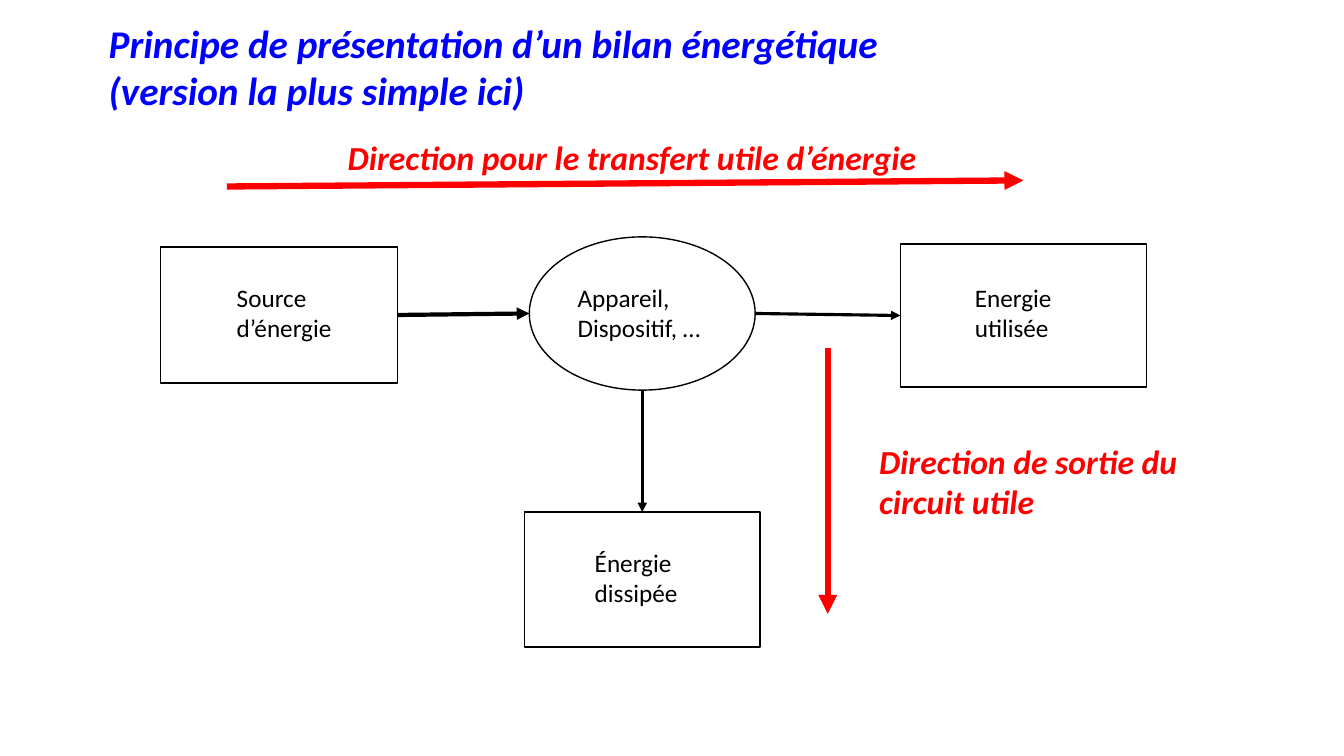
"""Build a slide showing the layout of a simple energy balance diagram."""
from pptx import Presentation
from pptx.dml.color import RGBColor
from pptx.enum import shapes, text
from pptx.oxml.ns import qn
from pptx.util import Inches, Pt
from lxml import etree

COLOURS = {"title": "0000FF", "ink": "000000", "direction": "FF0000"}

prs = Presentation()
prs.slide_width, prs.slide_height = Inches(13.33), Inches(7.5)
slide = prs.slides.add_slide(prs.slide_layouts[6])


def add_label(lines, box, size, colour, emphasis=False):
    label = slide.shapes.add_textbox(*map(Inches, box))
    frame = label.text_frame
    frame.word_wrap = True
    frame.auto_size = text.MSO_AUTO_SIZE.SHAPE_TO_FIT_TEXT
    frame.text = lines
    for paragraph in frame.paragraphs:
        font = paragraph.font
        font.name, font.size = "Calibri", Pt(size)
        font.bold = font.italic = emphasis
        font.color.rgb = RGBColor.from_string(COLOURS[colour])


def add_arrow(start, end, width, colour):
    arrow = slide.shapes.add_connector(
        shapes.MSO_CONNECTOR.STRAIGHT, *map(Inches, start + end))
    arrow.line.width = Pt(width)
    arrow.line.color.rgb = RGBColor.from_string(COLOURS[colour])
    etree.SubElement(arrow.line._get_or_add_ln(), qn("a:tailEnd"), type="triangle")
    etree.SubElement(arrow._element.spPr, qn("a:effectLst"))
    return arrow


stages = {}
for stage, outline, box in [
    ("source", shapes.MSO_SHAPE.RECTANGLE, (1.59, 2.45, 2.35, 1.35)),
    ("device", shapes.MSO_SHAPE.OVAL, (5.25, 2.35, 2.24, 1.52)),
    ("used", shapes.MSO_SHAPE.RECTANGLE, (8.93, 2.42, 2.44, 1.42)),
    ("lost", shapes.MSO_SHAPE.RECTANGLE, (5.2, 5.08, 2.34, 1.34)),
]:
    stages[stage] = slide.shapes.add_shape(outline, *map(Inches, box))
    stages[stage].shadow.inherit = False
    stages[stage].fill.background()
    stages[stage].line.width = Pt(1)
    stages[stage].line.color.rgb = RGBColor.from_string(COLOURS["ink"])

supply = add_arrow((3.94, 3.13), (5.25, 3.11), 3, "ink")
supply.begin_connect(stages["source"], 3)
useful_output = add_arrow((7.49, 3.11), (8.93, 3.11), 2.25, "ink")
useful_output.end_connect(stages["used"], 1)
loss = add_arrow((6.37, 3.87), (6.37, 5.08), 2.25, "ink")
loss.end_connect(stages["lost"], 0)

for lines, box in [
    ("Appareil,\nDispositif, …", (5.63, 2.75, 1.56, 0.71)),
    ("Source\nd’énergie", (2.25, 2.75, 1.5, 0.71)),
    ("Energie\nutilisée", (9.57, 2.75, 1.99, 0.71)),
    ("Énergie dissipée", (5.8, 5.38, 1.39, 0.71)),
]:
    add_label(lines, box, 18, "ink")

add_label("Principe de présentation d’un bilan énergétique (version la plus simple ici)",
          (0.98, 0.14, 8.59, 1.04), 28, "title", True)

for start, end, caption, box in [
    ((2.25, 1.85), (10.15, 1.79), "Direction pour le transfert utile d’énergie",
     (3.35, 1.31, 6.22, 0.5)),
    ((8.21, 3.45), (8.21, 6.09), "Direction de sortie du circuit utile",
     (8.62, 4.32, 3.46, 0.91)),
]:
    add_arrow(start, end, 4.5, "direction")
    add_label(caption, box, 24, "direction", True)

prs.save("out.pptx")
